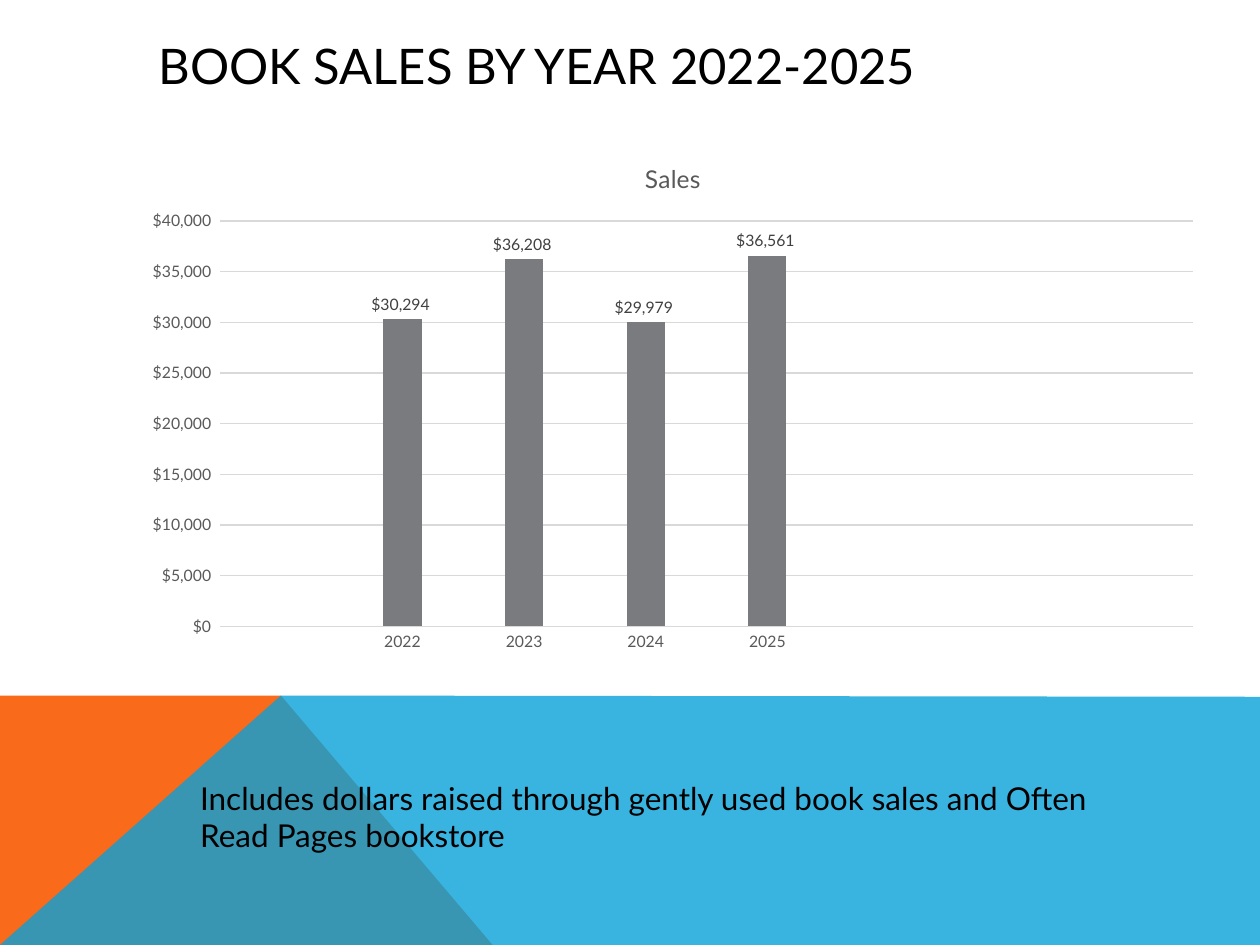
"""Build the yearly book sales slide with a column chart and a coloured footer."""
from lxml import etree
from pptx import Presentation
from pptx.chart.data import CategoryChartData
from pptx.dml.color import RGBColor
from pptx.enum.chart import XL_CHART_TYPE, XL_LABEL_POSITION, XL_TICK_MARK
from pptx.enum.text import MSO_ANCHOR, MSO_AUTO_SIZE, PP_ALIGN
from pptx.oxml.ns import qn
from pptx.util import Inches, Pt

COLUMNS = XL_CHART_TYPE.COLUMN_CLUSTERED
OUTSIDE = XL_LABEL_POSITION.OUTSIDE_END
NO_TICK = XL_TICK_MARK.NONE
TOP = MSO_ANCHOR.TOP
LEFT = PP_ALIGN.LEFT
GROW = MSO_AUTO_SIZE.SHAPE_TO_FIT_TEXT

FONT = "Lato"
COLORS = {
    "text": "000000", "axis": "595959", "label": "404040", "grid": "D9D9D9",
    "bar": "797B7E", "orange": "F96A1B", "blue": "08A1D9",
}
TITLE = "BOOK SALES BY YEAR 2022-2025"
CAPTION = ("Includes dollars raised through gently used book sales and "
           "Often Read Pages bookstore")
SERIES_NAME = "Sales"
SALES = [("", None), ("2022", 30294), ("2023", 36208), ("2024", 29979),
         ("2025", 36561), ("", None), ("", None), ("", None)]
DOLLARS = '"$"#,##0_);[Red]\\("$"#,##0\\)'

FOOTER = [
    ("orange", 100, [(0, 7.5), (0, 5.52), (2.23, 5.52), (3.91, 7.5)]),
    ("blue", 80, [(0, 7.5), (2.23, 5.52), (10, 5.53), (10, 7.5)]),
]
CHART_BOX = (1.04, 1.1, 8.6, 4.15)
TITLE_BOX = (1.16, 0.23, 8.34, 0.57)
CAPTION_BOX = (1.49, 6.13, 7.67, 0.71)


def rgb(color):
    return RGBColor.from_string(COLORS[color])


def style_font(font, size, color):
    font.name = FONT
    font.size = Pt(size)
    font.bold = False
    font.color.rgb = rgb(color)


def style_line(line, color):
    line.color.rgb = rgb(color)
    line.width = Pt(0.75)


def add_footer_panel(slide, color, opacity, points):
    corners = [(Inches(x), Inches(y)) for x, y in points]
    builder = slide.shapes.build_freeform(*corners[0])
    builder.add_line_segments(corners[1:], close=True)
    panel = builder.convert_to_shape()
    panel.shadow.inherit = False
    panel.fill.solid()
    panel.fill.fore_color.rgb = rgb(color)
    panel.line.fill.background()
    if opacity < 100:
        fill_color = panel.fill._xPr.find(qn("a:solidFill"))[0]
        etree.SubElement(fill_color, qn("a:alpha")).set("val", str(opacity * 1000))


def add_sales_chart(slide):
    sales_data = CategoryChartData(number_format=DOLLARS)
    sales_data.categories = [year for year, _ in SALES]
    sales_data.add_series(SERIES_NAME, [amount for _, amount in SALES])
    chart = slide.shapes.add_chart(COLUMNS, *map(Inches, CHART_BOX), sales_data).chart
    style_font(chart.font, 10, "text")
    chart.has_legend = False
    chart.has_title = True
    chart_title = chart.chart_title.text_frame
    chart_title.text = SERIES_NAME
    style_font(chart_title.paragraphs[0].runs[0].font, 14, "axis")

    for axis in (chart.category_axis, chart.value_axis):
        axis.major_tick_mark = axis.minor_tick_mark = NO_TICK
        style_font(axis.tick_labels.font, 9, "axis")
    style_line(chart.category_axis.format.line, "grid")
    amounts = chart.value_axis
    amounts.minimum_scale, amounts.maximum_scale, amounts.major_unit = 0, 40000, 5000
    amounts.tick_labels.number_format = DOLLARS
    amounts.tick_labels.number_format_is_linked = False
    amounts.format.line.fill.background()
    style_line(amounts.major_gridlines.format.line, "grid")

    plot = chart.plots[0]
    plot.gap_width, plot.overlap = 219, -27
    plot.vary_by_categories = False
    bars = plot.series[0]
    bars.invert_if_negative = False
    bars.format.fill.solid()
    bars.format.fill.fore_color.rgb = rgb("bar")
    labels = bars.data_labels
    labels.show_value = True
    labels.position = OUTSIDE
    labels.number_format = DOLLARS
    labels.number_format_is_linked = False
    style_font(labels.font, 9, "label")


def fill_text(box, bounds, text, size):
    box.left, box.top, box.width, box.height = map(Inches, bounds)
    frame = box.text_frame
    frame.text = text
    frame.word_wrap = True
    frame.auto_size = GROW
    frame.vertical_anchor = TOP
    paragraph = frame.paragraphs[0]
    paragraph.alignment = LEFT
    style_font(paragraph.runs[0].font, size, "text")


def main():
    deck = Presentation()
    deck.slide_width, deck.slide_height = Inches(10), Inches(7.5)
    slide = deck.slides.add_slide(deck.slide_layouts[5])
    for panel in FOOTER:
        add_footer_panel(slide, *panel)
    add_sales_chart(slide)
    fill_text(slide.shapes.title, TITLE_BOX, TITLE, 28)
    caption = slide.shapes.add_textbox(*map(Inches, CAPTION_BOX))
    fill_text(caption, CAPTION_BOX, CAPTION, 18)
    deck.save("out.pptx")


if __name__ == "__main__":
    main()
